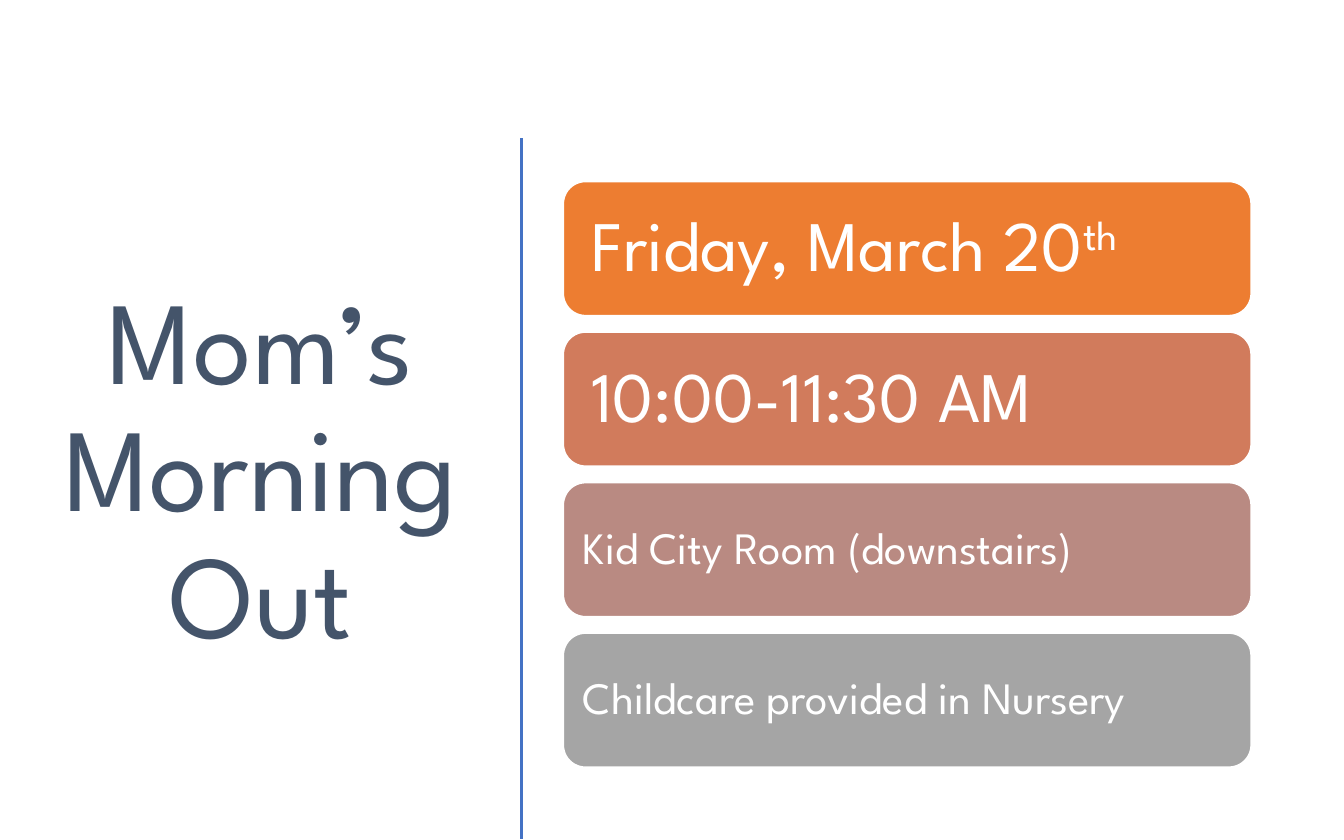
from pptx import Presentation
from pptx.dml.color import RGBColor as RGB
from pptx.enum.shapes import MSO_CONNECTOR as CONNECTOR, MSO_SHAPE as SHAPE
from pptx.enum.text import MSO_ANCHOR as ANCHOR, PP_ALIGN as ALIGN
from pptx.oxml.ns import qn
from pptx.util import Inches, Pt
from lxml.etree import SubElement

COLORS = {
    "title": "44546A",
    "divider": "4472C4",
    "white": "FFFFFF",
    "date": "ED7D31",
    "time": "D17B5C",
    "room": "B98A82",
    "childcare": "A5A5A5",
}


class EventSlide:
    font_name = "League Spartan"
    line_spacing = 0.9

    def __init__(self, deck):
        self.slide = deck.slides.add_slide(deck.slide_layouts[6])

    def color(self, key):
        return RGB.from_string(COLORS[key])

    def wording(self, shape, text, size, color, align, inset=0.1, superscript=""):
        frame = shape.text_frame
        margins = {f"margin_{side}": Inches(inset) for side in ("left", "top", "right", "bottom")}
        for name, value in {"word_wrap": True, "vertical_anchor": ANCHOR.MIDDLE, **margins}.items():
            setattr(frame, name, value)
        paragraph = frame.paragraphs[0]
        for name, value in {"alignment": align, "line_spacing": self.line_spacing}.items():
            setattr(paragraph, name, value)
        for part in filter(None, (text, superscript)):
            run = paragraph.add_run()
            run.text = part
            for name, value in {"name": self.font_name, "size": Pt(size)}.items():
                setattr(run.font, name, value)
            run.font.color.rgb = self.color(color)
        if superscript:
            run._r.get_or_add_rPr().set("baseline", "30000")

    def title(self, text, left, top, width, height):
        box = self.slide.shapes.add_textbox(*map(Inches, (left, top, width, height)))
        self.wording(box, text, 63, "title", ALIGN.CENTER)

    def divider(self, x, top, bottom):
        line = self.slide.shapes.add_connector(
            CONNECTOR.STRAIGHT, *map(Inches, (x, top, x, bottom)))
        line.line.color.rgb = self.color("divider")
        line.line.width = Pt(2)
        SubElement(line._element.spPr, qn("a:effectLst"))

    def card(self, text, left, top, width, height, fill, size, inset, superscript=""):
        card = self.slide.shapes.add_shape(
            SHAPE.ROUNDED_RECTANGLE, *map(Inches, (left, top, width, height)))
        card.shadow.inherit = False
        card.fill.solid()
        card.fill.fore_color.rgb = self.color(fill)
        card.line.color.rgb = self.color("white")
        card.line.width = Pt(1)
        self.wording(card, text, size, "white", ALIGN.LEFT, inset, superscript)


def main():
    deck = Presentation()
    deck.slide_width, deck.slide_height = Inches(10), Inches(6.25)
    event = EventSlide(deck)
    event.title("Mom’s Morning Out", 0, 0.98, 3.88, 5.09)
    event.divider(3.88, 1.03, 6.24)
    details = [
        ("Friday, March 20", "date", 38, 0.16, "th"),
        ("10:00-11:30 AM", "time", 38, 0.16, ""),
        ("Kid City Room (downstairs)", "room", 24, 0.1, ""),
        ("Childcare provided in Nursery", "childcare", 24, 0.1, ""),
    ]
    first_top, card_height, gap = 1.35, 1, 0.12
    for index, (text, fill, size, inset, superscript) in enumerate(details):
        event.card(text, 4.19, first_top + index * (card_height + gap), 5.12, card_height,
                   fill, size, inset, superscript)
    deck.save("out.pptx")


if __name__ == "__main__":
    main()
